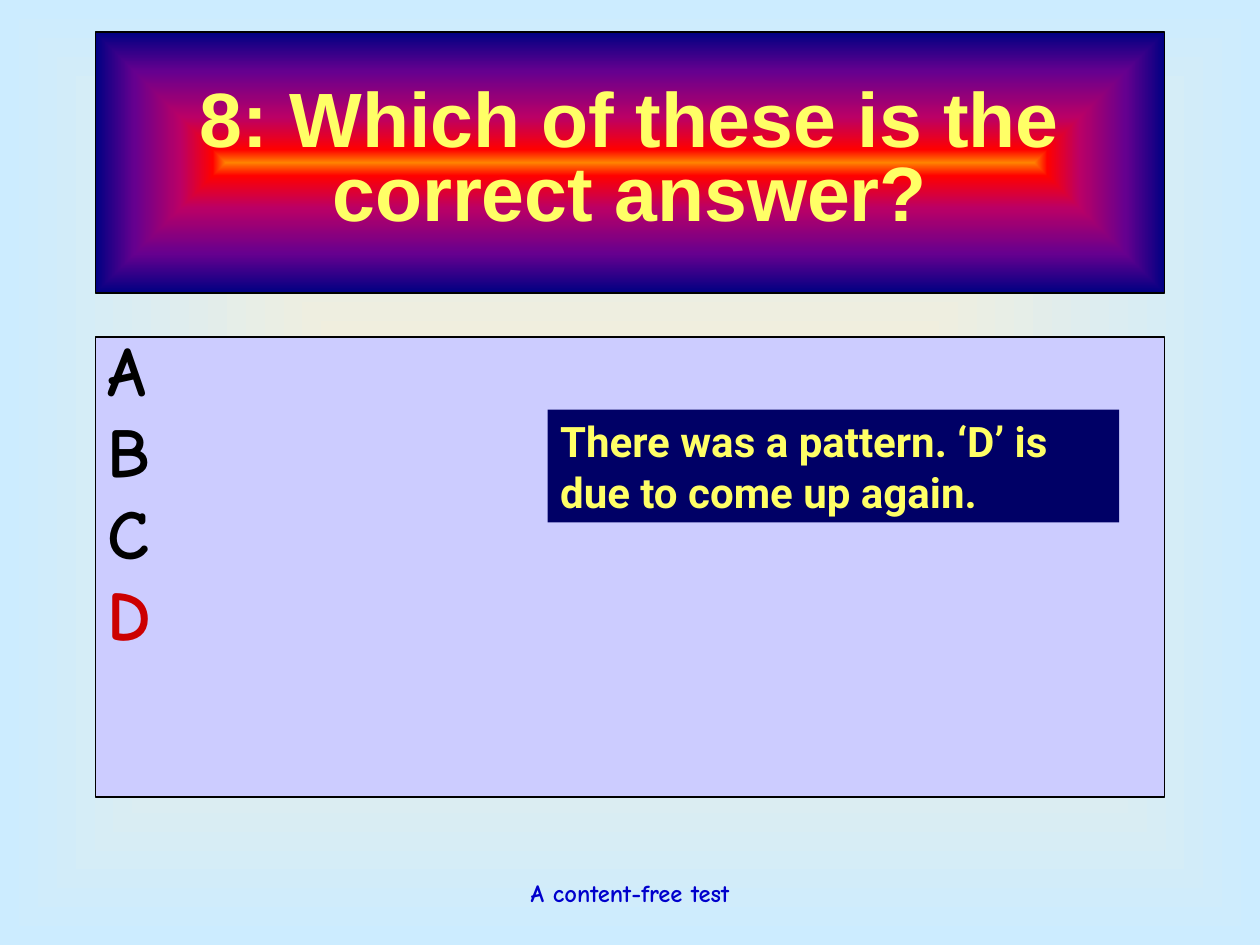
from dataclasses import dataclass

import pptx
import pptx.dml.color
import pptx.enum.shapes
import pptx.enum.text
import pptx.oxml
import pptx.oxml.ns
import pptx.util

Pt = pptx.util.Pt
ALIGN = pptx.enum.text.PP_ALIGN
ANCHOR = pptx.enum.text.MSO_ANCHOR
AUTO_SIZE = pptx.enum.text.MSO_AUTO_SIZE
NAMESPACE = pptx.oxml.ns.nsdecls("a")

YELLOW = "FFFF66"
BLACK = "000000"
BACKGROUND_STOPS = [(0, "FFEFD1"), (100, "CCECFF")]
QUESTION_STOPS = [(0, "FF8200"), (10, "FF0000"), (35, "BA0066"),
                  (70, "66008F"), (100, "000082")]


@dataclass
class Box:
    left: float
    top: float
    width: float
    height: float

    def lengths(self) -> list:
        return [Pt(v) for v in (self.left, self.top, self.width, self.height)]


def color(hex_code: str):
    return pptx.dml.color.RGBColor.from_string(hex_code)


def fill_from_center(fill, owner, stops: list) -> None:
    """Give the fill a gradient that spreads from the center of its owner element."""
    fill.gradient()
    gradient = next(owner.iter(pptx.oxml.ns.qn("a:gradFill")))
    for child in list(gradient):
        gradient.remove(child)
    stop_xml = "".join(
        f'<a:gs pos="{percent * 1000}"><a:srgbClr val="{hex_code}"/></a:gs>'
        for percent, hex_code in stops)
    gradient.append(pptx.oxml.parse_xml(f"<a:gsLst {NAMESPACE}>{stop_xml}</a:gsLst>"))
    gradient.append(pptx.oxml.parse_xml(
        f'<a:path {NAMESPACE} path="shape">'
        '<a:fillToRect l="50000" t="50000" r="50000" b="50000"/></a:path>'))


def add_panel(slide, box: Box, fill: str | list, outline: str | None = None):
    panel = slide.shapes.add_shape(
        pptx.enum.shapes.MSO_SHAPE.RECTANGLE, *box.lengths())
    panel.shadow.inherit = False
    if isinstance(fill, str):
        panel.fill.solid()
        panel.fill.fore_color.rgb = color(fill)
    else:
        fill_from_center(panel.fill, panel._element, fill)
    if outline:
        panel.line.color.rgb = color(outline)
        panel.line.width = Pt(1)
    else:
        panel.line.fill.background()
    return panel


def write(shape, lines: list, *, font: str, size: float, colors: list,
          align=ALIGN.LEFT, anchor=ANCHOR.TOP, wrap: bool = True,
          line_spacing: float = 1.0, before_percent: int = 0,
          hanging: float = 0) -> None:
    """Write one paragraph per line, each in its own color."""
    frame = shape.text_frame
    frame.word_wrap = wrap
    frame.vertical_anchor = anchor
    for index, (line, hex_code) in enumerate(zip(lines, colors)):
        paragraph = frame.paragraphs[0] if index == 0 else frame.add_paragraph()
        paragraph.alignment = align
        paragraph.line_spacing = line_spacing
        properties = paragraph._p.get_or_add_pPr()
        if before_percent:
            properties.append(pptx.oxml.parse_xml(
                f'<a:spcBef {NAMESPACE}><a:spcPct val="{before_percent * 1000}"/></a:spcBef>'))
        if hanging:
            properties.set("marL", str(Pt(hanging)))
            properties.set("indent", str(-Pt(hanging)))
        run = paragraph.add_run()
        run.text = line
        run.font.name = font
        run.font.size = Pt(size)
        run.font.bold = True
        run.font.color.rgb = color(hex_code)


def main() -> None:
    deck = pptx.Presentation()
    deck.slide_width, deck.slide_height = Pt(720), Pt(540)
    slide = deck.slides.add_slide(deck.slide_layouts[6])
    fill_from_center(slide.background.fill, slide._element, BACKGROUND_STOPS)

    footer = slide.shapes.add_textbox(*Box(246, 492, 228, 36).lengths())
    write(footer, ["A content-free test"], font="Comic Neue", size=14,
          colors=["0000CC"], align=ALIGN.CENTER, anchor=ANCHOR.MIDDLE, wrap=False)

    question = add_panel(slide, Box(54.5, 18.5, 611, 149), QUESTION_STOPS, BLACK)
    write(question, ["8: Which of these is the correct answer?"], font="Arial",
          size=44, colors=[YELLOW], align=ALIGN.CENTER, anchor=ANCHOR.MIDDLE,
          line_spacing=0.8)

    answers = add_panel(slide, Box(54.5, 192.5, 611, 263), "CCCCFF", BLACK)
    write(answers, ["A", "B", "C", "D"], font="Comic Neue", size=40,
          colors=[BLACK, BLACK, BLACK, "CC0000"], line_spacing=0.8,
          before_percent=20, hanging=27)

    explanation = add_panel(slide, Box(313, 234, 326.5, 64.5), "000066")
    write(explanation, ["There was a pattern. ‘D’ is due to come up again."],
          font="Roboto", size=24, colors=[YELLOW], before_percent=50)
    explanation.text_frame.auto_size = AUTO_SIZE.SHAPE_TO_FIT_TEXT

    deck.save("out.pptx")


if __name__ == "__main__":
    main()
